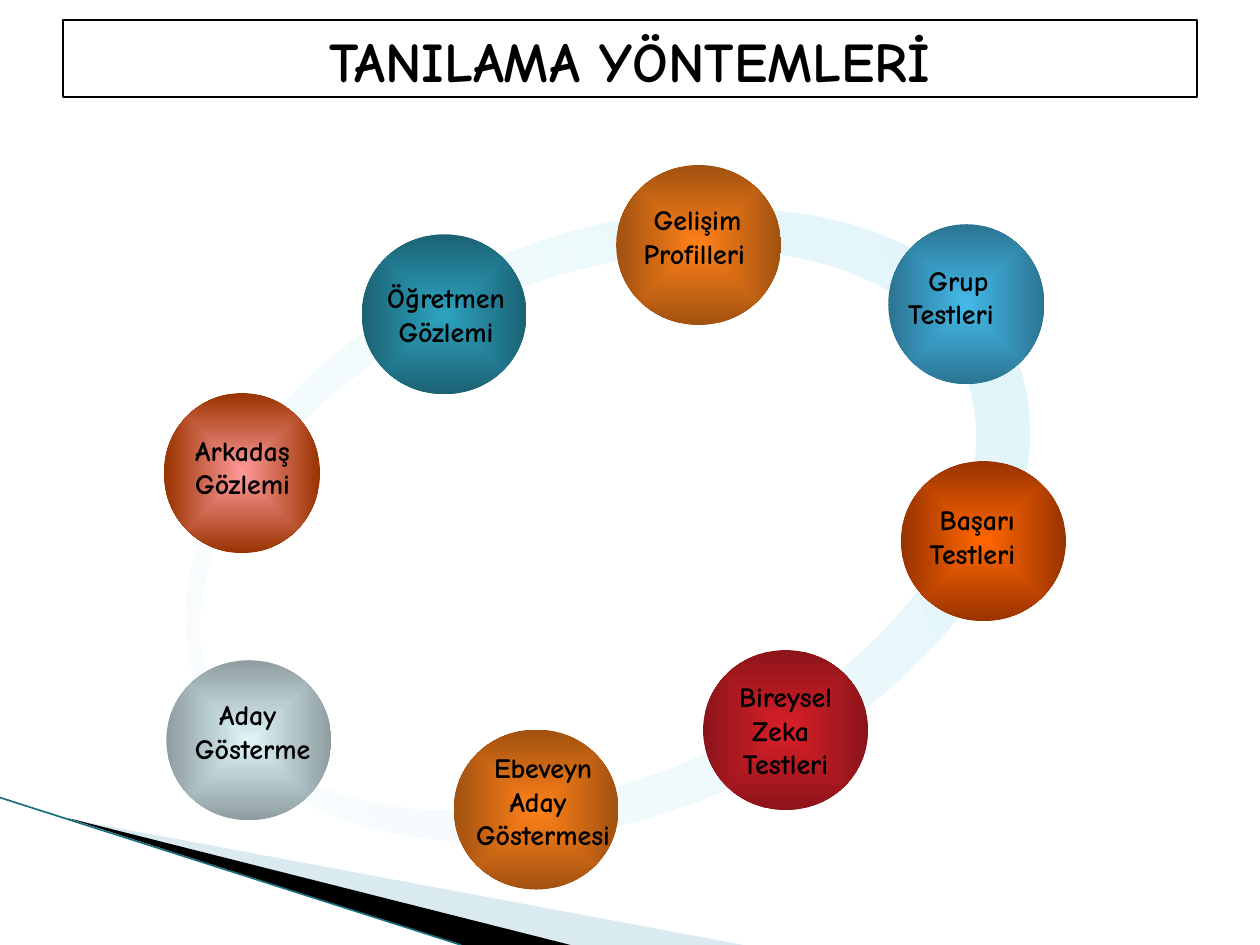
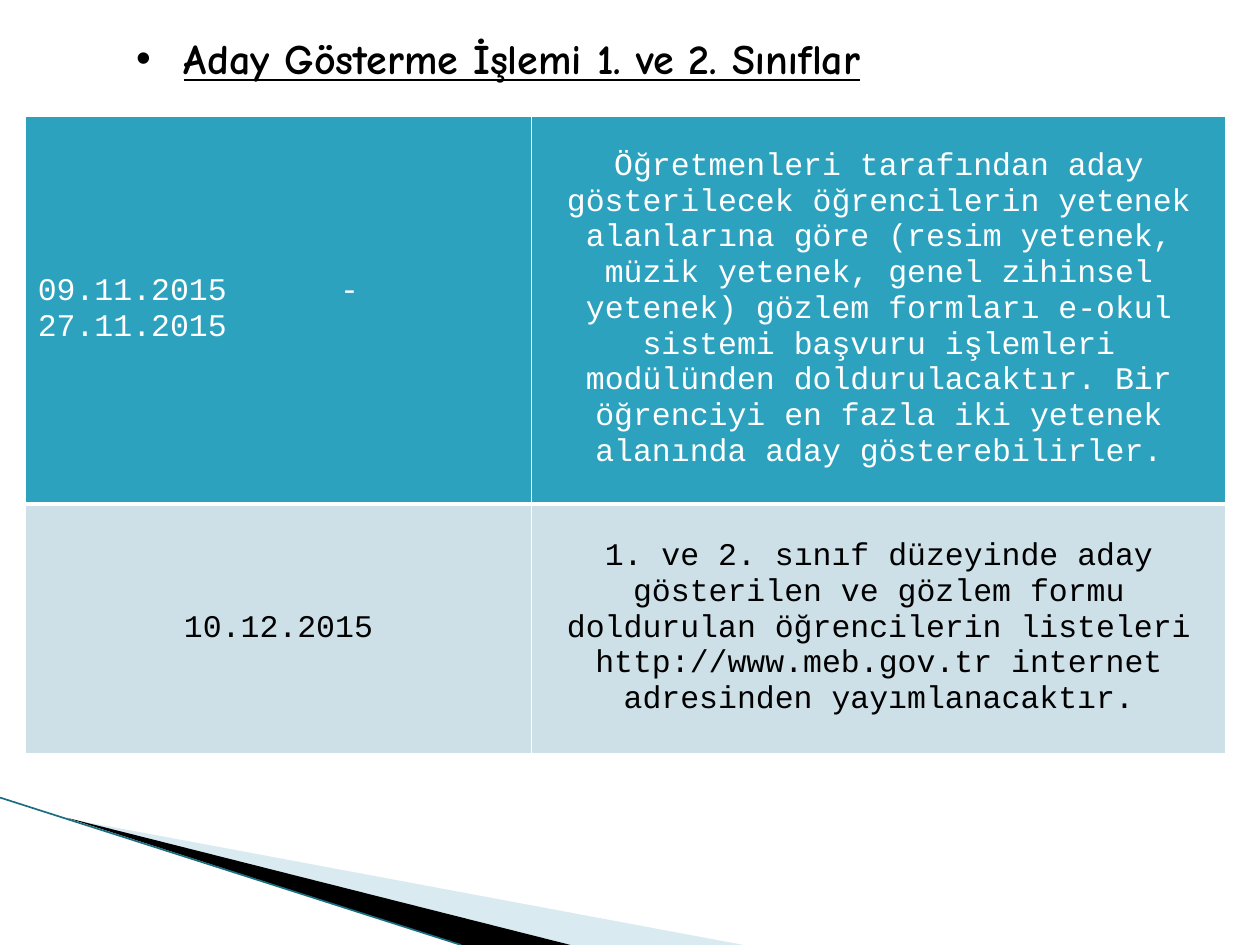
"""Builds two slides on identification methods and the nomination calendar."""
from dataclasses import dataclass
from math import cos, pi, sin

from lxml import etree
from pptx import Presentation
from pptx.dml.color import RGBColor
from pptx.enum.shapes import MSO_CONNECTOR, MSO_SHAPE
from pptx.enum.text import MSO_ANCHOR, MSO_AUTO_SIZE, PP_ALIGN
from pptx.oxml import parse_xml
from pptx.oxml.ns import nsdecls, qn
from pptx.util import Inches, Pt

OVAL = MSO_SHAPE.OVAL
STRAIGHT = MSO_CONNECTOR.STRAIGHT
LEFT, CENTER = PP_ALIGN.LEFT, PP_ALIGN.CENTER
TOP, MIDDLE = MSO_ANCHOR.TOP, MSO_ANCHOR.MIDDLE
NO_FIT = MSO_AUTO_SIZE.NONE
TITLE_ONLY = 5


@dataclass(frozen=True)
class Theme:
    display: str = "Comic Neue"
    mono: str = "Courier New"
    black: str = "000000"
    white: str = "FFFFFF"
    pale_band: str = "A0CBDC"
    edge: str = "1B6E82"
    header: str = "2DA2BF"
    row: str = "CDE0E8"
    ring: tuple = (("F2FBFD", 36), ("DEF5FA", 100))
    teal: tuple = ("2DA2BF", "1B6273")
    orange: tuple = ("FF8119", "A15110")
    sky: tuple = ("44B9E8", "2B7492")
    flame: tuple = ("FF6600", "993300")
    red: tuple = ("DA1F28", "8B141A")
    pink: tuple = ("FF9999", "993300")
    ice: tuple = ("DEF5FA", "8E9DA0")
    title_size: int = 32
    heading_size: int = 24
    label_size: int = 16
    cell_size: int = 18


THEME = Theme()
CIRCLE_HEIGHT = 1.27

METHODS = [
    (["Öğretmen", "Gözlemi"], (2.87, 1.86, 1.31), THEME.teal, (2.91, 2.18, 1.26), None),
    (["Gelişim", "Profilleri"], (4.89, 1.31, 1.31), THEME.orange, (5.01, 1.56, 1.14), 0.08),
    (["Grup", "Testleri"], (7.05, 1.78, 1.24), THEME.sky, (7.11, 2.04, 1.05), 0.16),
    (["Başarı", "Testleri"], (7.15, 3.66, 1.31), THEME.flame, (7.28, 3.94, 1.05), 0.08),
    (["Bireysel", "Zeka ", "Testleri"], (5.58, 5.16, 1.31), THEME.red, None, None),
    (["Arkadaş", "Gözlemi"], (1.3, 3.12, 1.24), THEME.pink, (1.38, 3.39, 1.09), None),
    (["Aday ", "Gösterme"], (1.32, 5.24, 1.31), THEME.ice, (1.4, 5.49, 1.21), None),
    (["Ebeveyn", "Aday ", "Göstermesi"], (3.6, 5.79, 1.31), THEME.orange, (3.62, 5.91, 1.38), None),
]

CALENDAR = [
    [
        "09.11.2015\t-\v27.11.2015",
        "Öğretmenleri tarafından aday gösterilecek öğrencilerin yetenek alanlarına göre "
        "(resim yetenek, müzik yetenek, genel zihinsel yetenek) gözlem formları e-okul "
        "sistemi başvuru işlemleri modülünden doldurulacaktır. Bir öğrenciyi en fazla iki "
        "yetenek alanında aday gösterebilirler.",
    ],
    [
        "10.12.2015",
        "1. ve 2. sınıf düzeyinde aday gösterilen ve gözlem formu doldurulan öğrencilerin "
        "listeleri http://www.meb.gov.tr internet adresinden yayımlanacaktır.",
    ],
]


def ellipse_points(center_x, center_y, radius_x, radius_y, direction, steps=90):
    angles = [direction * 2 * pi * step / steps for step in range(steps)]
    return [(center_x + radius_x * cos(a), center_y + radius_y * sin(a)) for a in angles]


def to_inches(points):
    return [(Inches(x), Inches(y)) for x, y in points]


class Deck:
    """Holds the theme and the current slide, and draws each kind of element."""

    def __init__(self, theme):
        self.theme = theme
        self.deck = Presentation()
        self.deck.slide_width, self.deck.slide_height = Inches(10), Inches(7.5)
        self.slide = None

    def new_slide(self):
        self.slide = self.deck.slides.add_slide(self.deck.slide_layouts[TITLE_ONLY])
        self.corner_bands()

    def corner_bands(self):
        theme = self.theme
        pale = self.outline([[(0.55, 6.5), (5.9, 7.5), (4.53, 7.5)]])
        self.solid(pale, theme.pale_band, 40)
        dark = self.outline([[(0.53, 6.49), (4.53, 7.5), (3.66, 7.5)]])
        self.solid(dark, theme.black)
        self.line((0, 6.33), (3.66, 7.5), theme.edge, 0.95)

    def solid(self, shape, color, alpha=None):
        shape.fill.solid()
        shape.fill.fore_color.rgb = RGBColor.from_string(color)
        if alpha:
            swatch = shape.element.spPr.find(qn("a:solidFill"))[0]
            etree.SubElement(swatch, qn("a:alpha"), val=str(alpha * 1000))

    def gradient(self, shape, stops, direction):
        shape.fill.gradient()
        properties = shape.element.spPr
        marks = "".join(
            f'<a:gs pos="{position}"><a:srgbClr val="{color}">'
            f'<a:alpha val="{alpha * 1000}"/></a:srgbClr></a:gs>'
            for position, (color, alpha) in zip((0, 100000), stops)
        )
        properties.replace(
            properties.find(qn("a:gradFill")),
            parse_xml(
                f'<a:gradFill {nsdecls("a")} rotWithShape="1">'
                f"<a:gsLst>{marks}</a:gsLst>{direction}</a:gradFill>"
            ),
        )

    def outline(self, contours):
        first, *others = [to_inches(contour) for contour in contours]
        builder = self.slide.shapes.build_freeform(*first[0])
        builder.add_line_segments(first[1:], close=True)
        for contour in others:
            builder.move_to(*contour[0])
            builder.add_line_segments(contour[1:], close=True)
        shape = builder.convert_to_shape()
        shape.shadow.inherit = False
        shape.line.fill.background()
        return shape

    def line(self, start, end, color, width):
        points = [Inches(value) for value in (*start, *end)]
        connector = self.slide.shapes.add_connector(STRAIGHT, *points)
        connector.line.color.rgb = RGBColor.from_string(color)
        connector.line.width = Pt(width)
        etree.SubElement(connector.element.spPr, qn("a:effectLst"))

    def ring(self):
        ring = self.outline([
            ellipse_points(4.82, 4.17, 3.5, 2.3, 1),
            ellipse_points(4.66, 4.15, 3.23, 1.99, -1),
        ])
        ring.rotation = 337.4
        self.gradient(ring, self.theme.ring, '<a:lin ang="0" scaled="1"/>')

    def circle(self, left, top, width, colors):
        circle = self.slide.shapes.add_shape(
            OVAL, *map(Inches, (left, top, width, CIRCLE_HEIGHT))
        )
        circle.shadow.inherit = False
        circle.line.fill.background()
        center = (
            '<a:path path="shape">'
            '<a:fillToRect l="50000" t="50000" r="50000" b="50000"/></a:path>'
        )
        self.gradient(circle, [(color, 100) for color in colors], center)
        return circle

    def format_paragraph(self, paragraph, text, align, **font):
        paragraph.text = text
        paragraph.alignment = align
        style = {"name": self.theme.display, "bold": True, "color": self.theme.black, **font}
        color = RGBColor.from_string(style.pop("color"))
        for run in paragraph.runs:
            for key, value in style.items():
                setattr(run.font, key, value)
            run.font.color.rgb = color

    def method(self, lines, place, colors, label_place, indent):
        circle = self.circle(*place, colors)
        if label_place:
            height = 0.1 + 0.27 * len(lines)
            frame = self.slide.shapes.add_textbox(
                *map(Inches, (*label_place, height))
            ).text_frame
        else:
            frame = circle.text_frame
            frame.vertical_anchor = MIDDLE
        frame.word_wrap = False
        for number, text in enumerate(lines):
            paragraph = frame.add_paragraph() if number else frame.paragraphs[0]
            if indent and number == 0:
                paragraph._p.get_or_add_pPr().set("indent", str(Inches(indent)))
            align = LEFT if indent else CENTER
            self.format_paragraph(paragraph, text, align, size=Pt(self.theme.label_size))

    def title(self, text, box, align, size, underline=False, bullet=None):
        title = self.slide.shapes.title
        title.left, title.top, title.width, title.height = map(Inches, box)
        settings = {"auto_size": NO_FIT, "word_wrap": True, "vertical_anchor": TOP}
        for key, value in settings.items():
            setattr(title.text_frame, key, value)
        paragraph = title.text_frame.paragraphs[0]
        if bullet:
            properties = paragraph._p.get_or_add_pPr()
            properties.set("marL", str(Inches(0.38)))
            properties.set("indent", str(Inches(-0.38)))
            etree.SubElement(properties, qn("a:buFont"), typeface="Arial")
            etree.SubElement(properties, qn("a:buChar"), char=bullet)
        self.format_paragraph(paragraph, text, align, size=Pt(size), underline=underline)
        return title

    def borders(self, cell, bottom):
        properties = cell._tc.get_or_add_tcPr()
        for index, (side, width) in enumerate(
            {"lnL": 1, "lnR": 1, "lnT": 1, "lnB": bottom}.items()
        ):
            border = parse_xml(
                f'<a:{side} {nsdecls("a")} w="{Pt(width)}"><a:solidFill>'
                f'<a:srgbClr val="{self.theme.white}"/></a:solidFill></a:{side}>'
            )
            properties.insert(index, border)

    def table(self, rows, box, widths, heights):
        theme = self.theme
        table = self.slide.shapes.add_table(
            len(rows), len(widths), *map(Inches, box)
        ).table
        table.first_row = table.horz_banding = False
        for column, width in zip(table.columns, widths):
            column.width = Inches(width)
        for row, height in zip(table.rows, heights):
            row.height = Inches(height)
        looks = [(theme.header, theme.white, 3), (theme.row, theme.black, 1)]
        for r, (texts, (fill, ink, bottom)) in enumerate(zip(rows, looks)):
            for c, text in enumerate(texts):
                cell = table.cell(r, c)
                self.solid(cell, fill)
                self.borders(cell, bottom)
                cell.vertical_anchor = MIDDLE
                paragraph = cell.text_frame.paragraphs[0]
                if "\t" in text:
                    tabs = etree.SubElement(paragraph._p.get_or_add_pPr(), qn("a:tabLst"))
                    etree.SubElement(tabs, qn("a:tab"), pos=str(Inches(2.4)), algn="l")
                self.format_paragraph(
                    paragraph, text, LEFT if "\t" in text else CENTER,
                    name=theme.mono, size=Pt(theme.cell_size), bold=False, color=ink,
                )


def main():
    deck = Deck(THEME)

    deck.new_slide()
    deck.ring()
    for method in METHODS:
        deck.method(*method)
    banner = deck.title("TANILAMA YÖNTEMLERİ", (0.5, 0.16, 9, 0.61), CENTER, THEME.title_size)
    deck.solid(banner, THEME.white)
    banner.line.color.rgb = RGBColor.from_string(THEME.black)
    banner.line.width = Pt(0.75)

    deck.new_slide()
    deck.title(
        "Aday Gösterme İşlemi 1. ve 2. Sınıflar", (0.98, 0.21, 8.11, 0.5),
        LEFT, THEME.heading_size, underline=True, bullet="•",
    )
    deck.table(CALENDAR, (0.2, 0.92, 9.53, 5.06), (4.02, 5.51), (3.08, 1.98))

    deck.deck.save("out.pptx")


if __name__ == "__main__":
    main()
